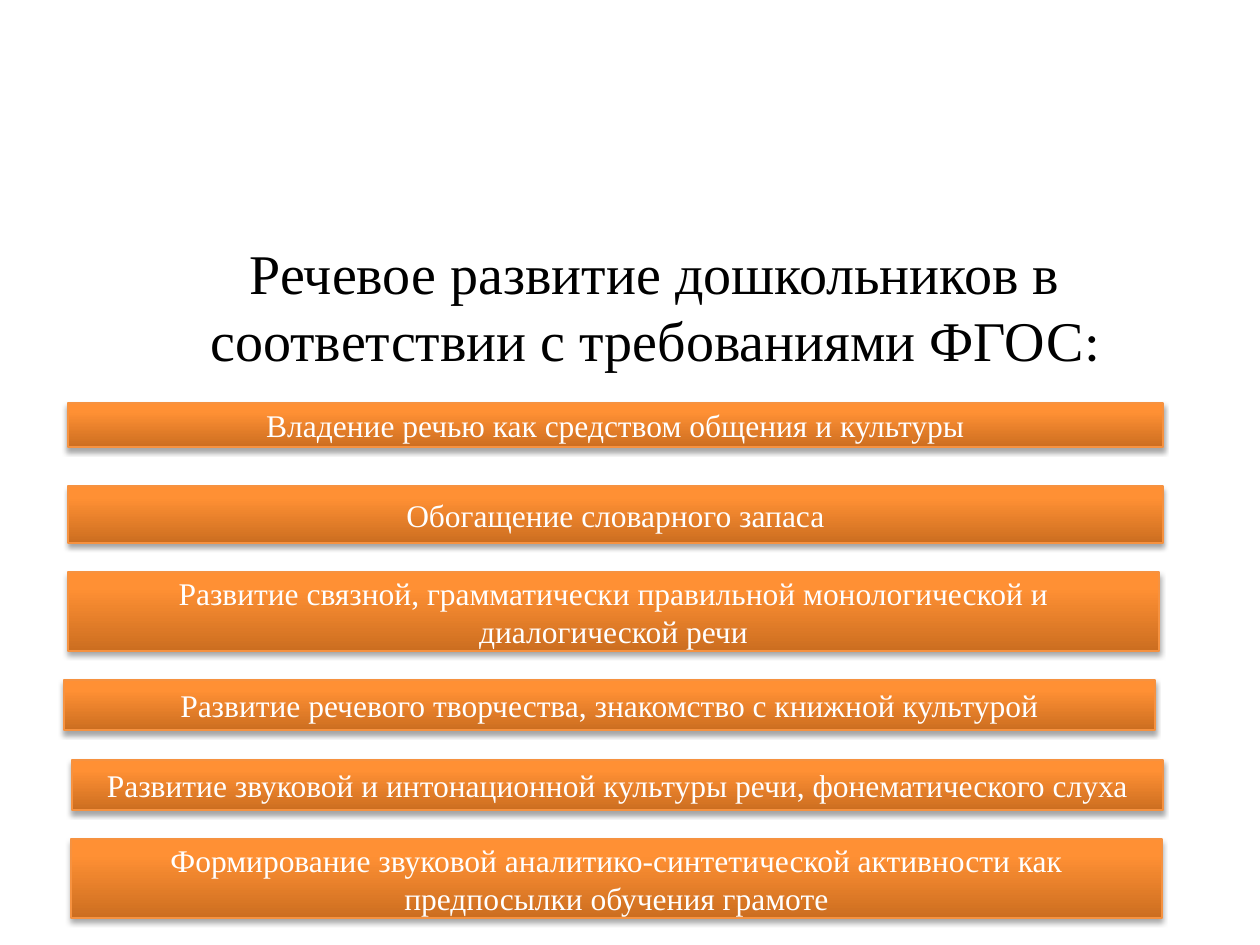
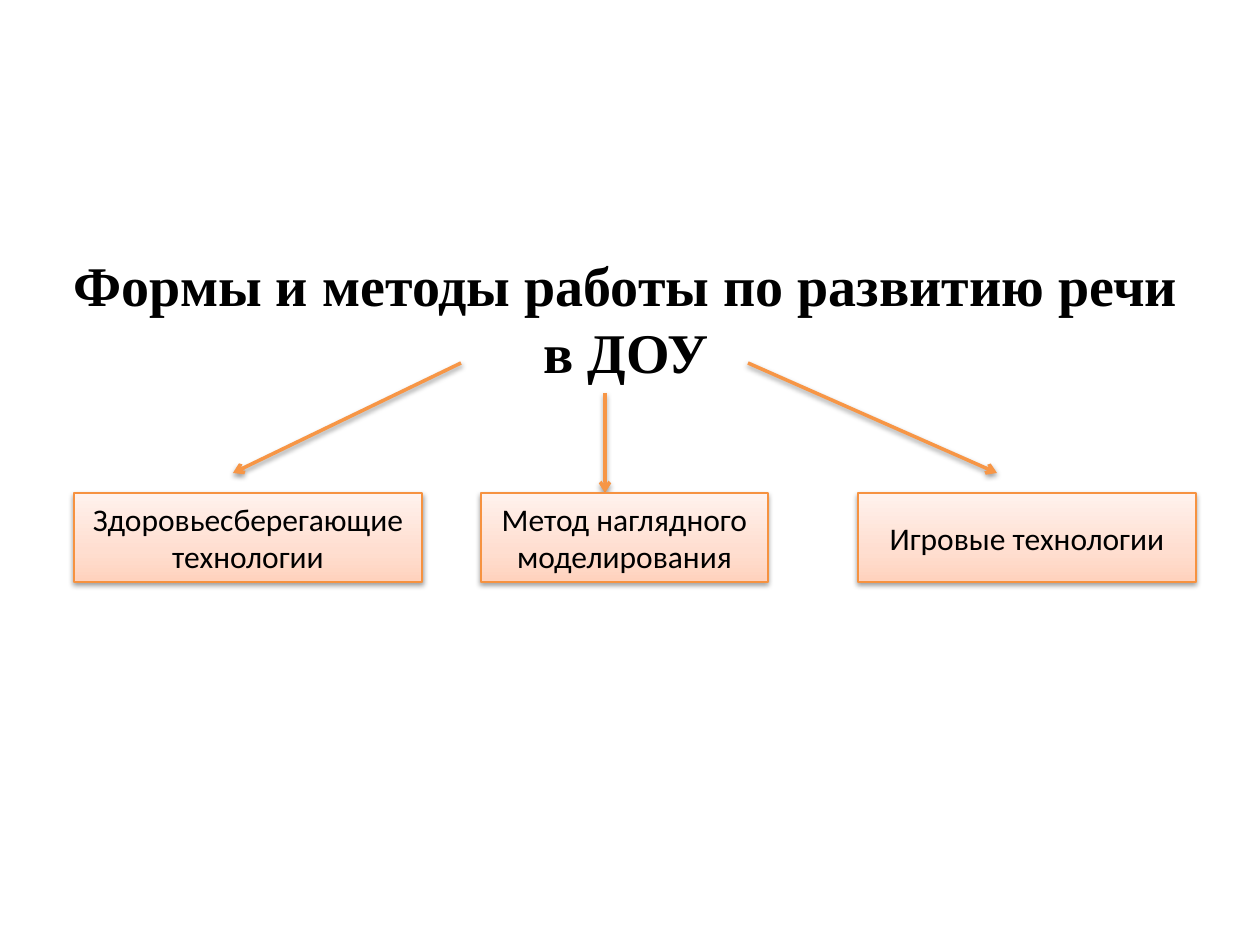
from lxml import etree
from pptx import Presentation
from pptx.dml.color import RGBColor
from pptx.enum.shapes import MSO_CONNECTOR, MSO_SHAPE
from pptx.enum.text import MSO_ANCHOR, MSO_AUTO_SIZE, PP_ALIGN
from pptx.oxml.ns import qn
from pptx.util import Emu, Pt

# Shared look
PX = 914400 / 126
BLACK = RGBColor(0x00, 0x00, 0x00)
WHITE = RGBColor(0xFF, 0xFF, 0xFF)
BORDER = RGBColor(0xF6, 0x92, 0x40)
ARROW = RGBColor(0xF7, 0x96, 0x46)
SERIF = "Times New Roman"
SANS = "Calibri"

# Gradient stops from the bottom edge to the top: (percent, colour)
ORANGE_STOPS = [(0, RGBColor(0xCC, 0x6E, 0x20)),
                (80, RGBColor(0xFF, 0x90, 0x34)),
                (100, RGBColor(0xFF, 0x91, 0x36))]
PEACH_STOPS = [(0, RGBColor(0xFF, 0xD2, 0xBD)),
               (35, RGBColor(0xFF, 0xDE, 0xD0)),
               (100, RGBColor(0xFF, 0xF2, 0xED))]

# Slide 1 goals: left, top, width, height, text
GOALS = [
    (68, 403, 1095, 44, "Владение речью как средством общения и культуры"),
    (68, 486, 1095, 57, "Обогащение словарного запаса"),
    (68, 572, 1091, 79, "Развитие связной, грамматически правильной "
                        "монологической и диалогической речи"),
    (64, 680, 1091, 50, "Развитие речевого творчества, знакомство с книжной культурой"),
    (72, 760, 1091, 50, "Развитие звуковой и интонационной культуры речи, "
                        "фонематического слуха"),
    (71, 839, 1091, 79, "Формирование звуковой аналитико-синтетической активности "
                        "как предпосылки обучения грамоте"),
]

# Slide 2 methods: left, width, text, arrow start, arrow end
METHOD_TOP, METHOD_HEIGHT = 493, 89
METHODS = [
    (74, 348, "Здоровьесберегающие технологии", (461, 363), (233, 473)),
    (481, 287, "Метод наглядного\nмоделирования", (605, 393), (605, METHOD_TOP)),
    (858, 338, "Игровые технологии", (748, 363), (997, 473)),
]


def px(*lengths):
    return [Emu(round(length * PX)) for length in lengths]


def format_span(span, font, size, color, bold=False):
    span.font.name = font
    span.font.size = Pt(size)
    span.font.color.rgb = color
    span.font.bold = bold


def add_shadow(shape, opacity, distance):
    """Give a shape or connector a soft shadow straight below it."""
    effects = etree.SubElement(shape._element.spPr, qn("a:effectLst"))
    shadow = etree.SubElement(effects, qn("a:outerShdw"), blurRad=str(Pt(3.1)),
                              dist=str(Pt(distance)), dir="5400000", rotWithShape="0")
    color = etree.SubElement(shadow, qn("a:srgbClr"), val=str(BLACK))
    etree.SubElement(color, qn("a:alpha"), val=str(opacity * 1000))


def set_gradient(shape, stops):
    shape.fill.gradient()
    shape.fill.gradient_angle = 90
    stop_list = shape._element.spPr.find(".//" + qn("a:gsLst"))
    for stop in list(stop_list):
        stop_list.remove(stop)
    for percent, color in stops:
        stop = etree.SubElement(stop_list, qn("a:gs"), pos=str(percent * 1000))
        etree.SubElement(stop, qn("a:srgbClr"), val=str(color))


def add_title_slide(deck, area, text, bold=False):
    """Add a title-only slide; the title sits on the bottom of its area."""
    slide = deck.slides.add_slide(deck.slide_layouts[5])
    title = slide.shapes.title
    title.left, title.top, title.width, title.height = px(*area)
    frame = title.text_frame
    frame.text = text
    frame.word_wrap = True
    frame.auto_size = MSO_AUTO_SIZE.NONE
    frame.vertical_anchor = MSO_ANCHOR.BOTTOM
    para = frame.paragraphs[0]
    para.alignment = PP_ALIGN.CENTER
    para.line_spacing = Pt(38)
    format_span(para.runs[0], SERIF, 32, BLACK, bold)
    return slide


def add_box(slide, area, text, stops, font, color, opacity, distance):
    box = slide.shapes.add_shape(MSO_SHAPE.RECTANGLE, *px(*area))
    set_gradient(box, stops)
    box.line.color.rgb = BORDER
    box.line.width = Pt(0.75)
    add_shadow(box, opacity, distance)
    frame = box.text_frame
    frame.text = text
    frame.word_wrap = True
    frame.vertical_anchor = MSO_ANCHOR.MIDDLE
    for para in frame.paragraphs:
        para.alignment = PP_ALIGN.CENTER
        format_span(para.runs[0], font, 18, color)


def add_arrow(slide, start, end):
    arrow = slide.shapes.add_connector(MSO_CONNECTOR.STRAIGHT, *px(*start, *end))
    arrow.line.color.rgb = ARROW
    arrow.line.width = Pt(2)
    etree.SubElement(arrow.line._get_or_add_ln(), qn("a:tailEnd"), type="arrow")
    add_shadow(arrow, 38, 1.6)


def add_goals_slide(deck):
    slide = add_title_slide(deck, (74, 154, 1162, 225),
                            "Речевое развитие дошкольников в соответствии "
                            "с требованиями ФГОС")
    colon = slide.shapes.title.text_frame.paragraphs[0].add_run()
    colon.text = ":"
    format_span(colon, SANS, 32, BLACK)
    for *area, text in GOALS:
        add_box(slide, area, text, ORANGE_STOPS, SERIF, WHITE, 35, 1.8)


def add_methods_slide(deck):
    slide = add_title_slide(deck, (59, 214, 1134, 177),
                            "Формы и методы работы по развитию речи в ДОУ", bold=True)
    for left, width, text, start, end in METHODS:
        add_arrow(slide, start, end)
        add_box(slide, (left, METHOD_TOP, width, METHOD_HEIGHT), text,
                PEACH_STOPS, SANS, BLACK, 38, 1.6)


def main():
    deck = Presentation()
    deck.slide_width, deck.slide_height = px(1260, 945)
    add_goals_slide(deck)
    add_methods_slide(deck)
    deck.save("out.pptx")


if __name__ == "__main__":
    main()
